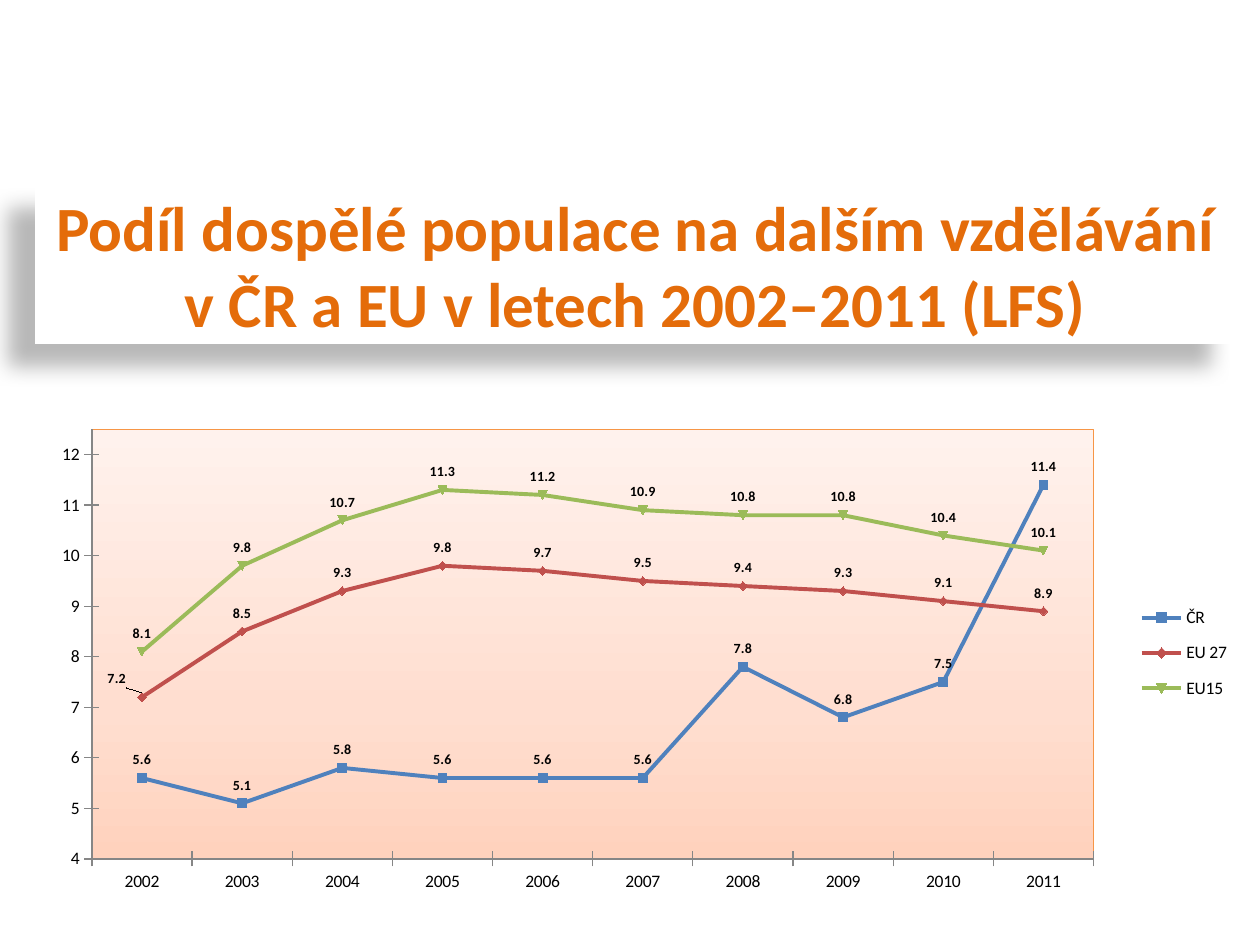
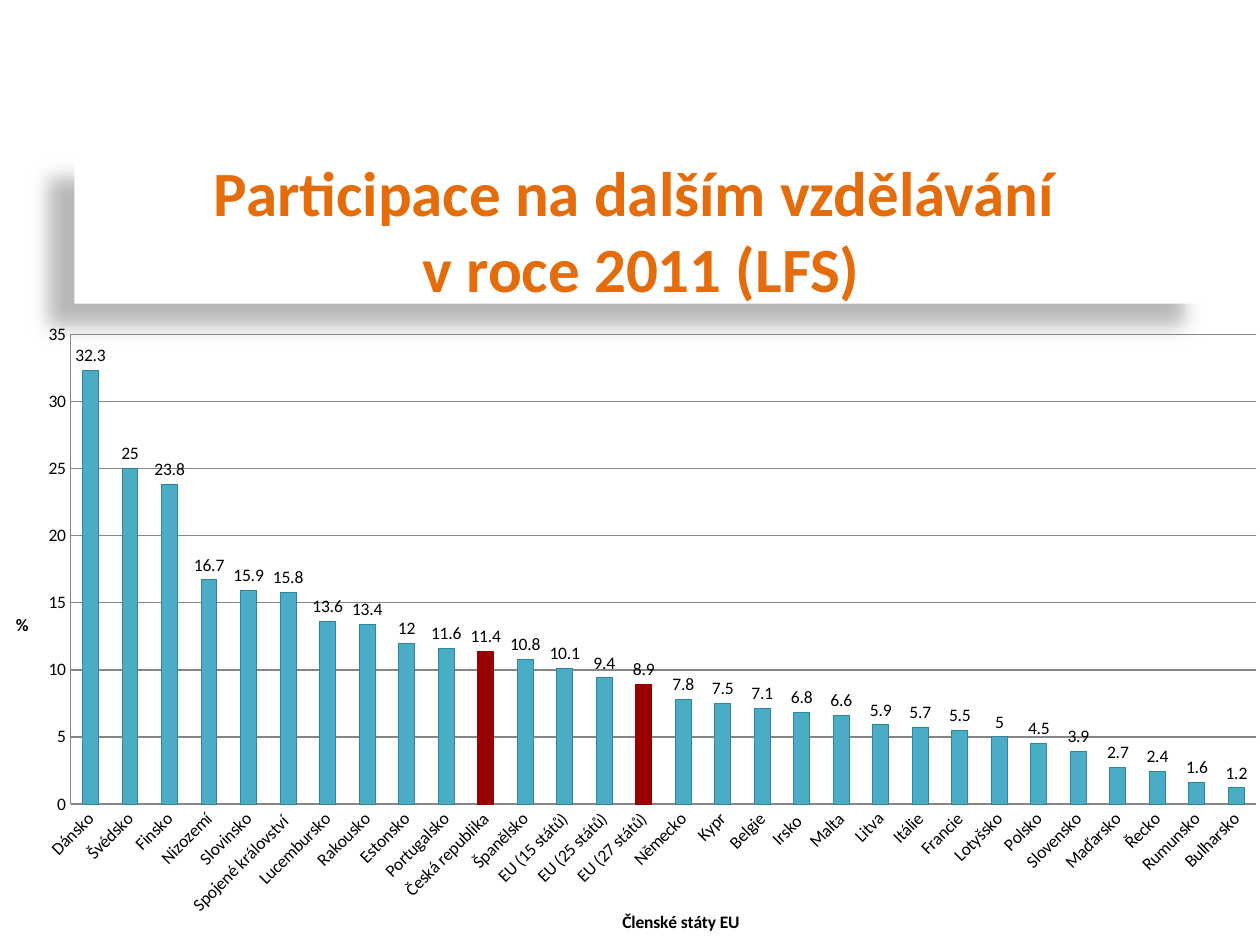
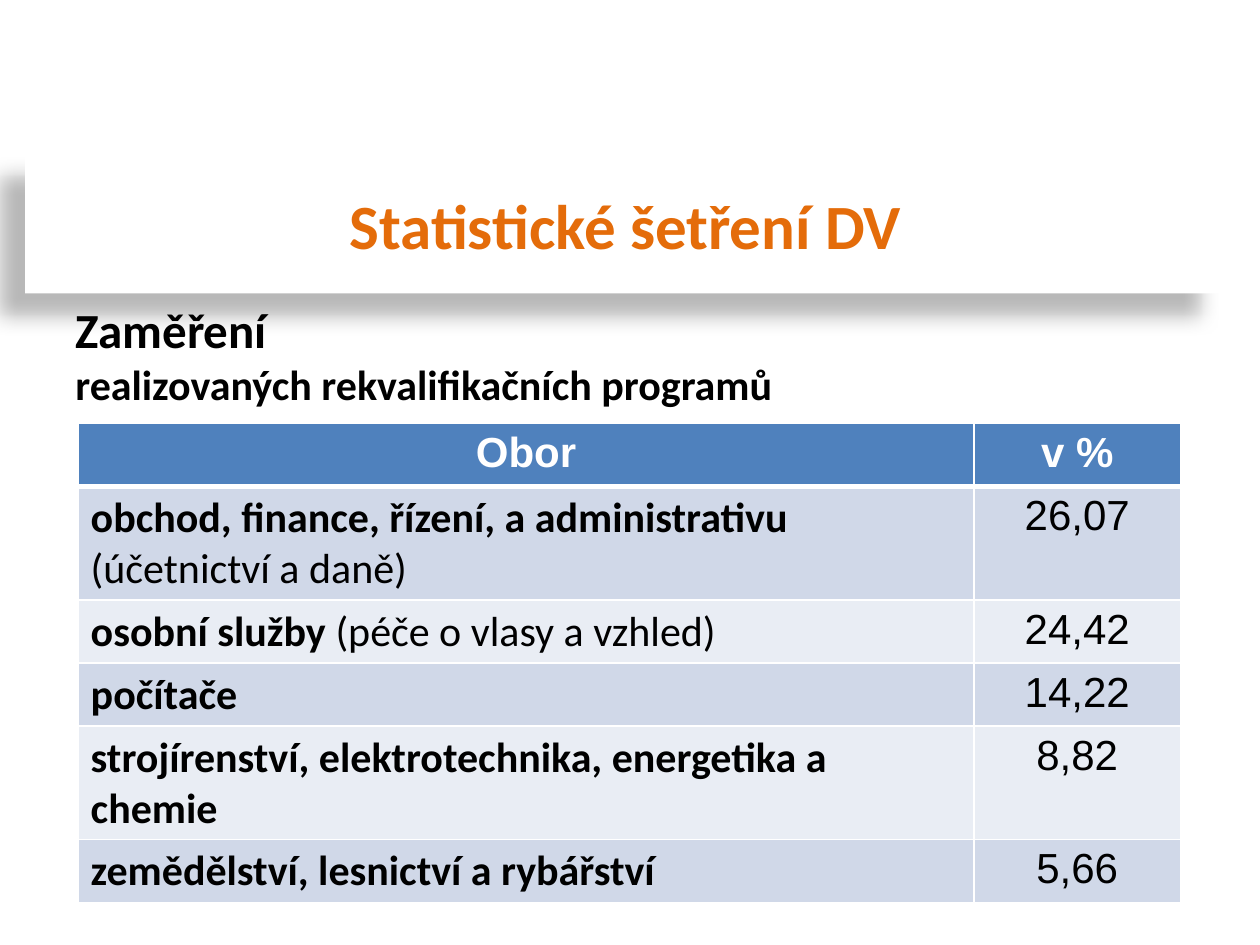
"""Build three slides on adult participation in further education."""
from lxml import etree
from pptx import Presentation, util as u
from pptx.chart.data import CategoryChartData
from pptx.dml.color import RGBColor
from pptx.enum import chart as ch, shapes, text
from pptx.oxml import parse_xml
from pptx.oxml.ns import nsdecls, qn

ORANGE, BLACK, WHITE, GREY = "E46C0A", "000000", "FFFFFF", "868686"
BLUE, RED, GREEN, TEAL, DARK_TEAL, CRIMSON = "4F81BD", "C0504D", "9BBB59", "4BACC6", "31859C", "990000"
BANDS = ["E9EDF4", "D0D8E8"]


def rgb(code):
    return RGBColor.from_string(code)


def place(parent, index, **shares):
    """Give a chart part a manual layout in shares of the chart."""
    for old in parent.findall(qn("c:layout")):
        parent.remove(old)
    items = "".join(f'<c:{key} val="{value}"/>' for key, value in shares.items())
    parent.insert(index, parse_xml(
        f'<c:layout {nsdecls("c")}><c:manualLayout>{items}</c:manualLayout></c:layout>'))


edge = {"xMode": "edge", "yMode": "edge"}
deck = Presentation()
deck.slide_width, deck.slide_height = u.Inches(10), u.Inches(7.5)

headings = [
    ((0.28, 1.47, 9.53, 1.26),
     "Podíl dospělé populace na dalším vzdělávání\nv ČR a EU v\u00a0letech 2002–2011 (LFS)"),
    ((0.59, 1.23, 9, 1.18), "Participace na dalším vzdělávání \vv roce 2011 (LFS)"),
    ((0.2, 1.23, 9.53, 1.1), "Statistické šetření DV"),
]
for box, wording in headings:
    slide = deck.slides.add_slide(deck.slide_layouts[6])
    heading = slide.shapes.add_shape(shapes.MSO_SHAPE.RECTANGLE, *map(u.Inches, box))
    heading.fill.solid()
    heading.fill.fore_color.rgb = rgb(WHITE)
    heading.line.fill.background()
    heading.shadow.inherit = False
    heading._element.spPr.find(qn("a:effectLst")).append(parse_xml(
        f'<a:outerShdw {nsdecls("a")} blurRad="{u.Pt(11.8)}" dist="{u.Pt(19.7)}" dir="{141 * 60000}" '
        f'algn="ctr" rotWithShape="0"><a:srgbClr val="{BLACK}"><a:alpha val="28000"/></a:srgbClr></a:outerShdw>'))
    heading.text_frame.vertical_anchor = text.MSO_ANCHOR.MIDDLE
    heading.text_frame.text = wording
    for line in heading.text_frame.paragraphs:
        line.alignment = text.PP_ALIGN.CENTER
        line.font.name, line.font.size, line.font.bold = "Calibri", u.Pt(36), True
        line.font.color.rgb = rgb(ORANGE)
trend_slide, states_slide, fields_slide = deck.slides

trend_data = CategoryChartData()
trend_data.categories = [str(year) for year in range(2002, 2012)]
trend_data.add_series("ČR", [5.6, 5.1, 5.8, 5.6, 5.6, 5.6, 7.8, 6.8, 7.5, 11.4])
trend_data.add_series("EU 27", [7.2, 8.5, 9.3, 9.8, 9.7, 9.5, 9.4, 9.3, 9.1, 8.9])
trend_data.add_series("EU15", [8.1, 9.8, 10.7, 11.3, 11.2, 10.9, 10.8, 10.8, 10.4, 10.1])

participation = {
    "Dánsko": 32.3, "Švédsko": 25, "Finsko": 23.8, "Nizozemí": 16.7, "Slovinsko": 15.9,
    "Spojené království ": 15.8, "Lucembursko": 13.6, "Rakousko": 13.4, "Estonsko": 12,
    "Portugalsko": 11.6, "Česká republika": 11.4, "Španělsko": 10.8, "EU (15 států)": 10.1,
    "EU (25 států)": 9.4, "EU (27 států)": 8.9, "Německo": 7.8, "Kypr": 7.5, "Belgie": 7.1,
    "Irsko ": 6.8, "Malta": 6.6, "Litva": 5.9, "Itálie": 5.7, "Francie": 5.5, "Lotyšsko": 5,
    "Polsko": 4.5, "Slovensko": 3.9, "Maďarsko": 2.7, "Řecko": 2.4, "Rumunsko": 1.6, "Bulharsko": 1.2,
}
states_data = CategoryChartData()
states_data.categories = list(participation)
states_data.add_series("Series 1", list(participation.values()))

charts = []
for slide, kind, box, data, tick, plot_box in [
    (trend_slide, ch.XL_CHART_TYPE.LINE_MARKERS, (0, 2.41, 10, 5.09), trend_data,
     ch.XL_TICK_MARK.CROSS, (0.073, 0.196, 0.795, 0.67)),
    (states_slide, ch.XL_CHART_TYPE.COLUMN_CLUSTERED, (0, 2.49, 10.03, 5.01), states_data,
     ch.XL_TICK_MARK.NONE, (0.056, 0.033, 0.938, 0.744)),
]:
    chart = slide.shapes.add_chart(kind, *map(u.Inches, box), data).chart
    chart.has_title = chart.has_legend = False
    chart.font.name, chart.font.size = "Calibri", u.Pt(10)
    chart.font.color.rgb = rgb(BLACK)
    chart.plots[0].vary_by_categories = False
    place(chart._chartSpace.chart.plotArea, 0, layoutTarget="inner", **edge, **dict(zip("xywh", plot_box)))
    for axis in (chart.category_axis, chart.value_axis):
        axis.major_tick_mark = tick
        axis.has_major_gridlines = False
        axis.format.line.color.rgb = rgb(GREY)
        axis.format.line.width = u.Pt(0.75)
    charts.append(chart)
trend, states = charts

trend.value_axis.minimum_scale, trend.value_axis.maximum_scale = 4, 12.5
trend.value_axis.major_unit = 1
trend.has_legend = True
trend.legend.position = ch.XL_LEGEND_POSITION.RIGHT
trend.legend.include_in_layout = False
place(trend.legend._element, 1, **edge, x=0.89, y=0.45, w=0.1, h=0.19)
for region, colour in zip(trend.plots[0].series, (BLUE, RED, GREEN)):
    region.smooth = False
    region.format.line.color.rgb = rgb(colour)
    region.format.line.width = u.Pt(2.25)
    region.marker.size = 5
    region.marker.format.fill.solid()
    region.marker.format.fill.fore_color.rgb = rgb(colour)
    region.marker.format.line.color.rgb = rgb(colour)
    labels = [region.data_labels]
    region.data_labels.show_value = True
    if region.name == "EU 27":
        labels.append(region.points[0].data_label)
    for label in labels:
        label.position = ch.XL_LABEL_POSITION.ABOVE
        label.font.size, label.font.bold = u.Pt(8), True
    for moved in region._element.iter(qn("c:dLbl")):
        place(moved, 1, x=-0.02, y=0)

stops = "".join(f'<a:gs pos="{share * 1000}"><a:srgbClr val="{colour}"/></a:gs>'
                for share, colour in [(0, "FFD2BD"), (35, "FFDED0"), (100, "FFF2ED")])
trend._chartSpace.chart.plotArea.append(parse_xml(
    f'<c:spPr {nsdecls("c", "a")}><a:gradFill><a:gsLst>{stops}</a:gsLst><a:lin ang="{270 * 60000}" scaled="0"/>'
    '</a:gradFill><a:ln w="9525"><a:solidFill><a:srgbClr val="F79646"/></a:solidFill></a:ln></c:spPr>'))

states.plots[0].gap_width = 150
states.value_axis.has_major_gridlines = True
states.value_axis.major_gridlines.format.line.color.rgb = rgb(GREY)
states.value_axis.maximum_scale, states.value_axis.major_unit = 35, 5
states.category_axis.tick_labels.font.size = u.Pt(10)
states.category_axis._element.find(qn("c:txPr")).find(qn("a:bodyPr")).set("rot", str(-45 * 60000))
for axis, caption, x, y in [(states.category_axis, "Členské státy EU", 0.49, 0.94),
                            (states.value_axis, "%", 0.01, 0.47)]:
    caption_frame = axis.axis_title.text_frame
    caption_frame.text = caption
    caption_frame._txBody.find(qn("a:bodyPr")).set("rot", "0")
    caption_font = caption_frame.paragraphs[0].font
    caption_font.name, caption_font.size, caption_font.bold = "Calibri", u.Pt(10), True
    place(axis.axis_title._element, 1, **edge, x=x, y=y)
shares = states.plots[0].series[0]
shares.data_labels.show_value = True
shares.data_labels.position = ch.XL_LABEL_POSITION.OUTSIDE_END
highlights = [shares.points[list(participation).index(name)] for name in ("Česká republika", "EU (27 států)")]
for bar, fill, outline in [(shares, TEAL, DARK_TEAL)] + [(point, CRIMSON, CRIMSON) for point in highlights]:
    bar.format.fill.solid()
    bar.format.fill.fore_color.rgb = rgb(fill)
    bar.format.line.color.rgb = rgb(outline)

intro = fields_slide.shapes.add_textbox(0, u.Inches(2.42), deck.slide_width, u.Inches(1.33)).text_frame
intro.word_wrap = True
intro.text = "Zaměření\nrealizovaných rekvalifikačních programů"
for line, size, gap in zip(intro.paragraphs, (28, 24), (0, 6)):
    line._p.get_or_add_pPr().set("marL", str(u.Inches(0.81)))
    line._p.get_or_add_pPr().set("indent", str(u.Inches(-0.31)))
    line.line_spacing, line.space_before = 0.8, u.Pt(gap)
    line.font.name, line.font.size, line.font.bold = "Calibri", u.Pt(size), True
    line.font.color.rgb = rgb(BLACK)

fields = [
    ("Obor", "", "v %"),
    ("obchod, finance, řízení, a administrativu", " (účetnictví a daně)", "26,07"),
    ("osobní služby", " (péče o vlasy a vzhled)", "24,42"),
    ("počítače", "", "14,22"),
    ("strojírenství, elektrotechnika, energetika a chemie", "", "8,82"),
    ("zemědělství, lesnictví a rybářství", "", "5,66"),
]
table = fields_slide.shapes.add_table(
    len(fields), 2, *map(u.Inches, (0.62, 3.36, 8.75, 0.41 * len(fields)))).table
for column, width in zip(table.columns, (7.11, 1.64)):
    column.width = u.Inches(width)
for row, (field, detail, percent) in enumerate(fields):
    for col, parts in enumerate([(field, detail), (percent,)]):
        cell = table.cell(row, col)
        cell.fill.solid()
        cell.fill.fore_color.rgb = rgb(BANDS[row % 2] if row else BLUE)
        for position, side in enumerate("LRTB"):
            thick = (row == 0 and side == "B") or (row == 1 and side == "T")
            border = etree.Element(qn(f"a:ln{side}"), w=str(u.Pt(3 if thick else 1)))
            paint = etree.SubElement(border, qn("a:solidFill"))
            etree.SubElement(paint, qn("a:srgbClr"), val=WHITE)
            cell._tc.get_or_add_tcPr().insert(position, border)
        line = cell.text_frame.paragraphs[0]
        line.alignment = text.PP_ALIGN.CENTER if row == 0 or col else text.PP_ALIGN.LEFT
        line.font.size = u.Pt(24)
        line.font.name = "Arial" if row == 0 or col else "Calibri"
        line.font.color.rgb = rgb(BLACK if row else WHITE)
        for order, part in enumerate(filter(None, parts)):
            run = line.add_run()
            run.text = part
            run.font.bold = row == 0 or (col == 0 and order == 0)

deck.save("out.pptx")
